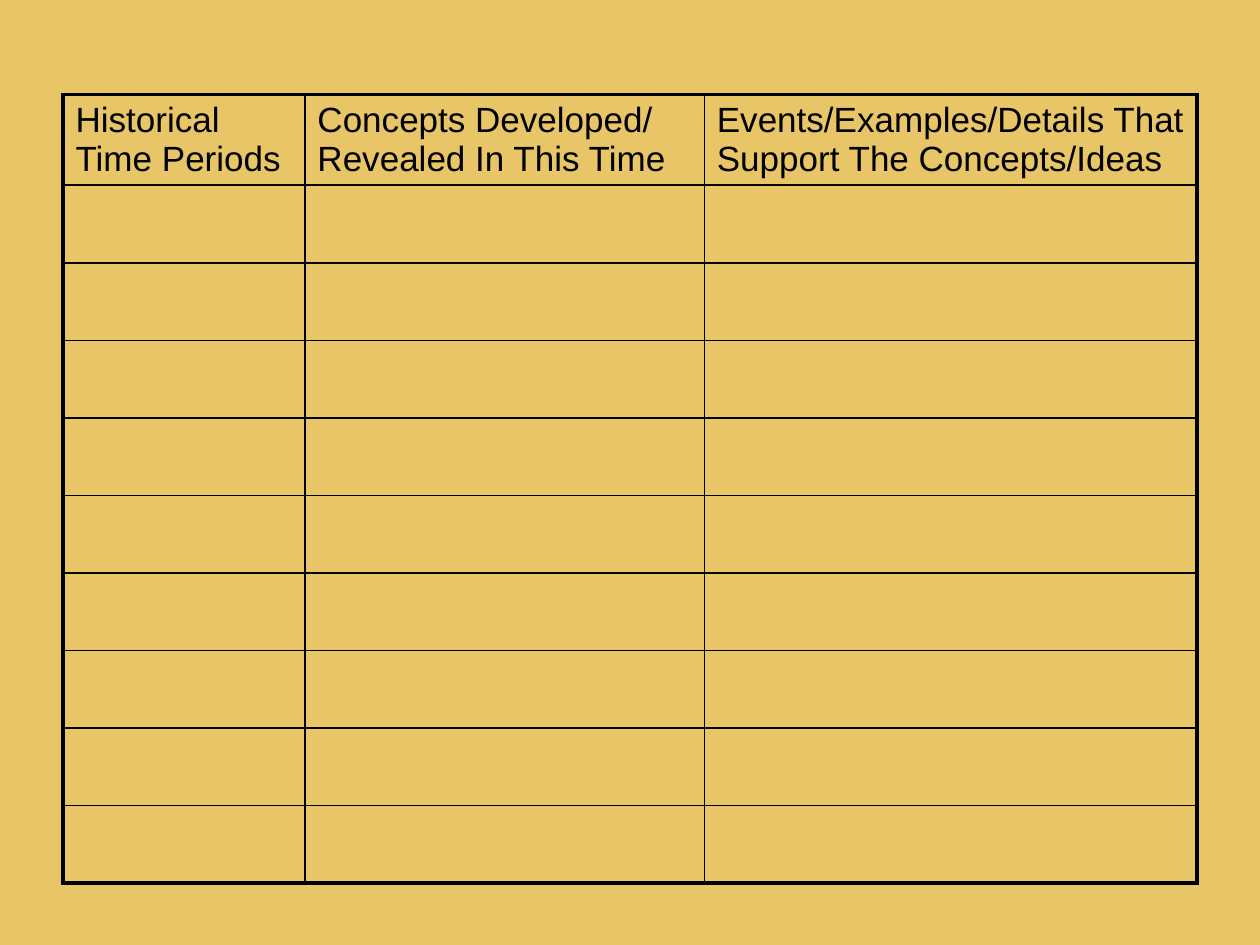
from lxml.etree import SubElement
from pptx import Presentation
from pptx.dml.color import RGBColor
from pptx.oxml.ns import qn
from pptx.util import Inches, Pt

GOLD = RGBColor(0xE8, 0xC5, 0x67)
BLACK = RGBColor(0, 0, 0)
THIN, THICK = Pt(1), Pt(2.25)
HEADERS = [
    "Historical Time Periods",
    "Concepts Developed/ Revealed In This Time",
    "Events/Examples/Details That Support The Concepts/Ideas",
]
COL_WIDTHS = [1.92, 3.17, 3.91]
BODY_ROWS = 9
HEADER_HEIGHT = 0.71


def set_borders(cell, widths):
    """Draw the left, right, top and bottom borders of a cell."""
    tc_pr = cell._tc.get_or_add_tcPr()
    for side, width in zip("LRTB", widths):
        ln = SubElement(tc_pr, qn(f"a:ln{side}"), w=str(width))
        fill = SubElement(ln, qn("a:solidFill"))
        SubElement(fill, qn("a:srgbClr"), val=str(BLACK))


def add_period_table(slide, left, top, width, height):
    """Add the blank worksheet table with its header row."""
    n_rows, n_cols = BODY_ROWS + 1, len(HEADERS)
    table = slide.shapes.add_table(
        n_rows, n_cols, Inches(left), Inches(top), Inches(width), Inches(height)
    ).table
    table.first_row = table.horz_banding = False
    for col, col_width in zip(table.columns, COL_WIDTHS):
        col.width = Inches(col_width)
    for i, row in enumerate(table.rows):
        row.height = Inches(
            HEADER_HEIGHT if i == 0 else (height - HEADER_HEIGHT) / BODY_ROWS
        )
        for j, cell in enumerate(row.cells):
            edges = (j == 0, j == n_cols - 1, i == 0, i == n_rows - 1)
            set_borders(cell, [THICK if edge else THIN for edge in edges])
            cell.fill.background()
    for cell, header in zip(table.rows[0].cells, HEADERS):
        cell.text_frame.text = header
        font = cell.text_frame.paragraphs[0].runs[0].font
        font.name, font.size, font.bold = "Arial", Pt(20), False
        font.color.rgb = BLACK


def main():
    """Build and save the slide."""
    prs = Presentation()
    prs.slide_width, prs.slide_height = Inches(10), Inches(7.5)
    slide = prs.slides.add_slide(prs.slide_layouts[6])
    slide.background.fill.solid()
    slide.background.fill.fore_color.rgb = GOLD
    add_period_table(slide, 0.5, 0.75, 9, 6.25)
    prs.save("out.pptx")


if __name__ == "__main__":
    main()
